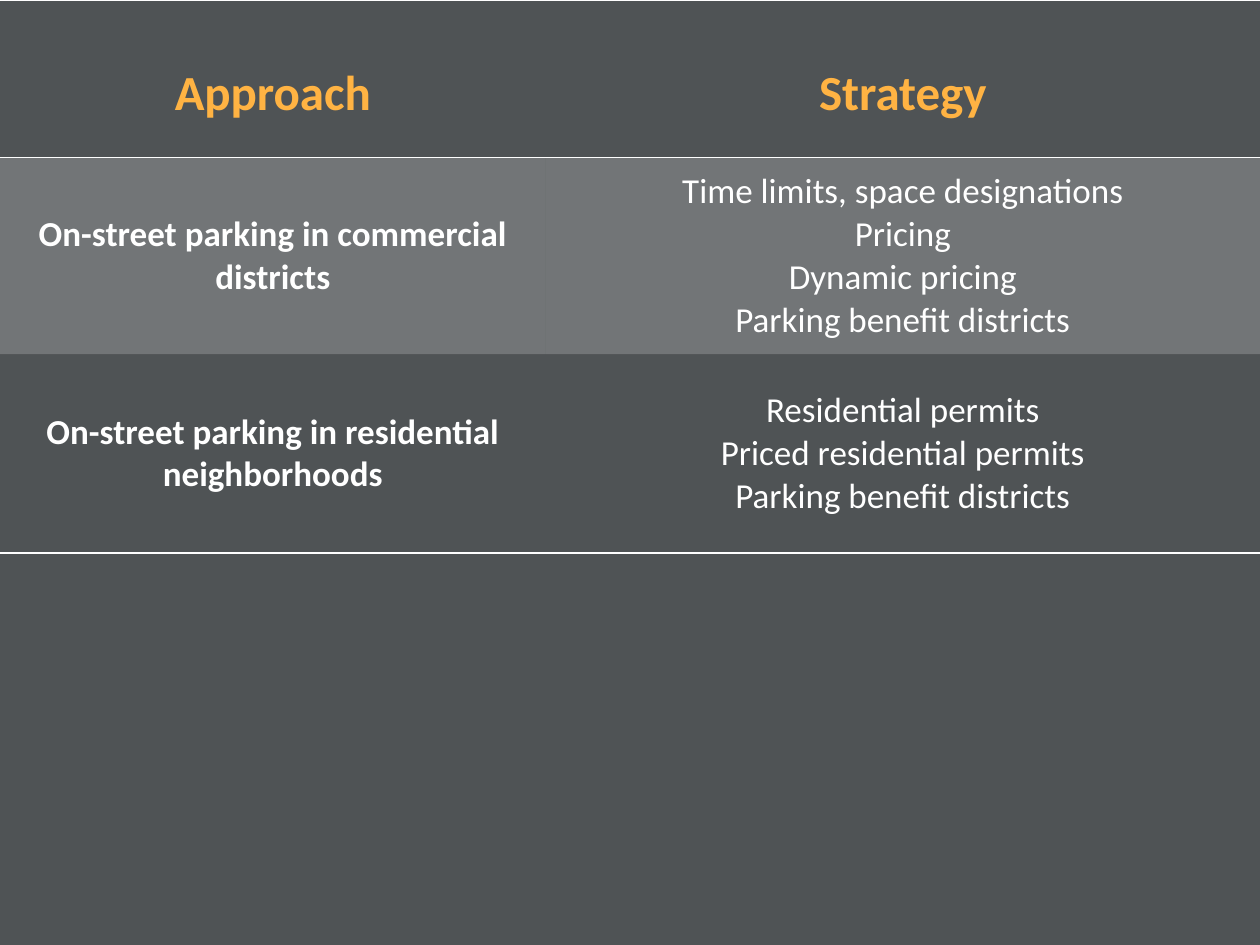
from dataclasses import dataclass

from lxml import etree
from pptx import Presentation
from pptx.dml.color import RGBColor
from pptx.enum.text import MSO_ANCHOR, PP_ALIGN
from pptx.oxml.ns import qn
from pptx.util import Cm, Pt

CENTER = PP_ALIGN.CENTER
MIDDLE = MSO_ANCHOR.MIDDLE
PLAIN_TABLE_STYLE = "{2D5ABB26-0587-4C30-8999-92F81FD0307C}"


@dataclass(frozen=True)
class Theme:
    font: str = "Calibri"
    background: str = "4F5355"
    accent: str = "FFB343"
    light: str = "FFFFFF"
    band_opacity: int = 20
    heading_size: int = 28
    body_size: int = 20
    rule_width: int = 1


THEME = Theme()
COLUMN_WIDTHS = (11, 14.4)
ROW_HEIGHTS = (3.18, 3.81, 4.01)
HEADINGS = ("Approach", "Strategy")
APPROACHES = (
    ("On-street parking in commercial districts",
     ("Time limits, space designations", "Pricing", "Dynamic pricing",
      "Parking benefit districts")),
    ("On-street parking in residential neighborhoods",
     ("Residential permits", "Priced residential permits",
      "Parking benefit districts")),
)


def set_margins(cell, side, vertical):
    cell.margin_left = cell.margin_right = Cm(side)
    cell.margin_top = cell.margin_bottom = Cm(vertical)


def write_lines(cell, lines, size, color, bold, line_spacing=None):
    """Put one centred paragraph in the cell for each line."""
    cell.vertical_anchor = MIDDLE
    frame = cell.text_frame
    for index, line in enumerate(lines):
        para = frame.add_paragraph() if index else frame.paragraphs[0]
        para.alignment = CENTER
        if line_spacing:
            para.line_spacing = line_spacing
        span = para.add_run()
        span.text = line
        span.font.name = THEME.font
        span.font.size = Pt(size)
        span.font.bold = bold
        span.font.color.rgb = RGBColor.from_string(color)


def fill_band(cell):
    """Fill the cell with a translucent light colour."""
    cell.fill.solid()
    cell.fill.fore_color.rgb = RGBColor.from_string(THEME.light)
    color = cell._tc.tcPr.find(".//" + qn("a:srgbClr"))
    alpha = etree.SubElement(color, qn("a:alpha"))
    alpha.set("val", str(THEME.band_opacity * 1000))


def rule_cell(cell, sides):
    """Draw rules on the given sides, which precede the fill in the XML."""
    properties = cell._tc.get_or_add_tcPr()
    for position, side in enumerate(sides):
        line = etree.Element(qn("a:ln" + side), w=str(Pt(THEME.rule_width)))
        fill = etree.SubElement(line, qn("a:solidFill"))
        etree.SubElement(fill, qn("a:srgbClr"), val=THEME.light)
        properties.insert(position, line)


def add_plain_table(page):
    frame = page.shapes.add_table(
        len(ROW_HEIGHTS), len(COLUMN_WIDTHS), Cm(0), Cm(0),
        Cm(sum(COLUMN_WIDTHS)), Cm(sum(ROW_HEIGHTS)))
    table = frame.table
    table.first_row = table.horz_banding = False
    table._tbl.tblPr.find(qn("a:tableStyleId")).text = PLAIN_TABLE_STYLE
    for column, width in zip(table.columns, COLUMN_WIDTHS):
        column.width = Cm(width)
    for row, height in zip(table.rows, ROW_HEIGHTS):
        row.height = Cm(height)
    for cell in table.iter_cells():
        cell.fill.background()
    return table


def fill_heading_row(table):
    for column, heading in enumerate(HEADINGS):
        cell = table.cell(0, column)
        set_margins(cell, 0.13, 0)
        write_lines(cell, [heading], THEME.heading_size, THEME.accent,
                    bold=True, line_spacing=1.5)
        rule_cell(cell, "TB")


def fill_approach_row(table, row, approach, strategies):
    for column, lines in enumerate(([approach], strategies)):
        cell = table.cell(row, column)
        set_margins(cell, 0.25, 0.25)
        write_lines(cell, lines, THEME.body_size, THEME.light,
                    bold=column == 0)
        # Odd rows are banded; the last row closes with a rule
        if row % 2:
            fill_band(cell)
        if row == len(APPROACHES):
            rule_cell(cell, "B")


def main():
    # Slide and background
    deck = Presentation()
    deck.slide_width, deck.slide_height = Cm(25.4), Cm(19.05)
    page = deck.slides.add_slide(deck.slide_layouts[6])
    page.background.fill.solid()
    page.background.fill.fore_color.rgb = RGBColor.from_string(THEME.background)

    # Parking table
    table = add_plain_table(page)
    fill_heading_row(table)
    for row, (approach, strategies) in enumerate(APPROACHES, start=1):
        fill_approach_row(table, row, approach, strategies)

    deck.save("out.pptx")


if __name__ == "__main__":
    main()
